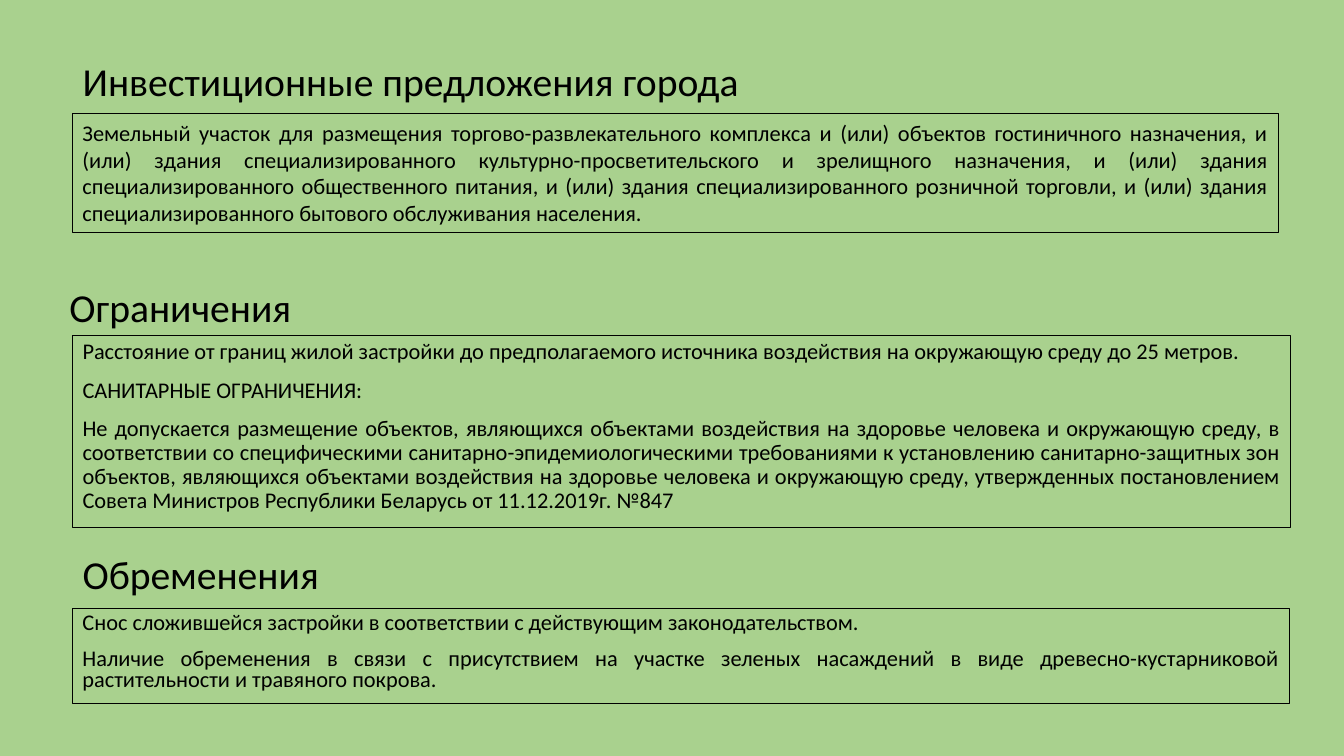
from dataclasses import dataclass

import pptx
import pptx.dml.color
import pptx.enum.shapes
import pptx.enum.text
import pptx.util
from pptx.util import Inches

GREEN = pptx.dml.color.RGBColor(0xA9, 0xD1, 0x8E)
BLACK = pptx.dml.color.RGBColor(0x00, 0x00, 0x00)
ALIGN = pptx.enum.text.PP_ALIGN
ANCHOR = pptx.enum.text.MSO_ANCHOR
LEFT = 0.72
HEADING_HEIGHT = 0.58


@dataclass
class Section:
    heading: str
    heading_left: float
    heading_top: float
    heading_width: float
    box_top: float
    box_width: float
    box_height: float
    line_spacing: float
    paragraphs: list[str]


SECTIONS = [
    Section("Инвестиционные предложения города", LEFT, 0.51, 7.77, 1.13, 11.96, 1.18, 1.0, [
        "Земельный участок для размещения торгово-развлекательного комплекса и (или) "
        "объектов гостиничного назначения, и (или) здания специализированного "
        "культурно-просветительского и зрелищного назначения, и (или) здания "
        "специализированного общественного питания, и (или) здания специализированного "
        "розничной торговли, и (или) здания специализированного бытового обслуживания "
        "населения.",
    ]),
    Section("Ограничения", 0.59, 2.75, 5.24, 3.33, 12.08, 1.9, 0.9, [
        "Расстояние от границ жилой застройки до предполагаемого источника воздействия "
        "на окружающую среду до 25 метров.",
        "САНИТАРНЫЕ ОГРАНИЧЕНИЯ:",
        "Не допускается размещение объектов, являющихся объектами воздействия на здоровье "
        "человека и окружающую среду, в соответствии со специфическими "
        "санитарно-эпидемиологическими требованиями к установлению санитарно-защитных зон "
        "объектов, являющихся объектами воздействия на здоровье человека и окружающую "
        "среду, утвержденных постановлением Совета Министров Республики Беларусь "
        "от 11.12.2019г. №847",
    ]),
    Section("Обременения", LEFT, 5.4, 5.11, 6.04, 12.07, 0.94, 0.8, [
        "Снос сложившейся застройки в соответствии с действующим законодательством.",
        "Наличие обременения в связи с присутствием на участке зеленых насаждений в виде "
        "древесно-кустарниковой растительности и травяного покрова.",
    ]),
]


def apply(target: object, formats: dict[str, object]) -> None:
    for name, value in formats.items():
        setattr(target, name, value)


def write(shape: pptx.shapes.base.BaseShape, texts: list[str], size: float,
          anchor: ANCHOR, para_formats: dict[str, object]) -> None:
    frame = shape.text_frame
    apply(frame, {"word_wrap": True, "vertical_anchor": anchor,
                  "auto_size": pptx.enum.text.MSO_AUTO_SIZE.NONE})
    for index, text in enumerate(texts):
        para = frame.add_paragraph() if index else frame.paragraphs[0]
        apply(para, para_formats)
        span = para.add_run()
        span.text = text
        apply(span.font, {"name": "Calibri", "size": pptx.util.Pt(size)})
        span.font.color.rgb = BLACK


def draw_heading(page: pptx.slide.Slide, section: Section, is_title: bool) -> None:
    place = [Inches(value) for value in (section.heading_left, section.heading_top,
                                         section.heading_width, HEADING_HEIGHT)]
    if is_title:
        shape = page.shapes.title
        apply(shape, dict(zip(("left", "top", "width", "height"), place)))
    else:
        shape = page.shapes.add_textbox(*place)
    write(shape, [section.heading], 28.3, ANCHOR.BOTTOM,
          {"alignment": ALIGN.LEFT, "line_spacing": 0.9})


def draw_box(page: pptx.slide.Slide, section: Section) -> None:
    box = page.shapes.add_shape(
        pptx.enum.shapes.MSO_SHAPE.RECTANGLE, Inches(LEFT), Inches(section.box_top),
        Inches(section.box_width), Inches(section.box_height))
    box.shadow.inherit = False
    box.fill.background()
    box.line.color.rgb = BLACK
    box.line.width = pptx.util.Pt(0.75)
    space = pptx.util.Pt(10 if len(section.paragraphs) > 1 else 0)
    write(box, section.paragraphs, 16, ANCHOR.TOP,
          {"alignment": ALIGN.JUSTIFY, "line_spacing": section.line_spacing,
           "space_before": space})


def main() -> None:
    # Deck and page
    deck = pptx.Presentation()
    apply(deck, {"slide_width": Inches(13.33), "slide_height": Inches(7.5)})
    page = deck.slides.add_slide(deck.slide_layouts.get_by_name("Title Only"))
    page.background.fill.solid()
    page.background.fill.fore_color.rgb = GREEN

    # Headings with their framed texts
    for index, section in enumerate(SECTIONS):
        draw_heading(page, section, is_title=index == 0)
        draw_box(page, section)

    deck.save("out.pptx")


if __name__ == "__main__":
    main()
